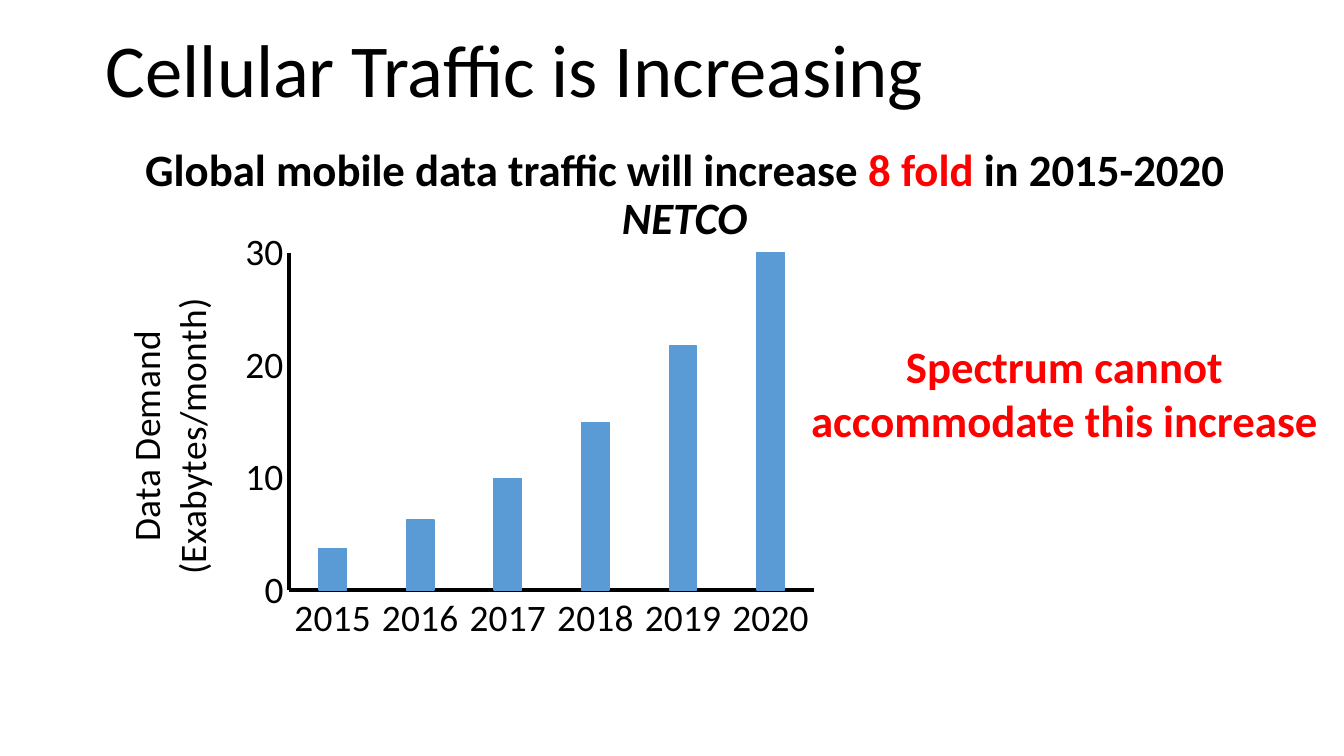
import dataclasses

import pptx
import pptx.chart.data
import pptx.dml.color
import pptx.enum.chart
import pptx.enum.text
import pptx.oxml
import pptx.oxml.ns
import pptx.util

Inches, Pt = pptx.util.Inches, pptx.util.Pt
RGBColor = pptx.dml.color.RGBColor
ALIGN, ANCHOR = pptx.enum.text.PP_ALIGN, pptx.enum.text.MSO_ANCHOR

BLACK = RGBColor(0x00, 0x00, 0x00)
RED = RGBColor(0xFF, 0x00, 0x00)
BLUE = RGBColor(0x5B, 0x9B, 0xD5)
FONT = "Calibri"


@dataclasses.dataclass
class Run:
    text: str
    color: RGBColor = BLACK
    fmt: dict = dataclasses.field(default_factory=dict)


@dataclasses.dataclass
class TextBlock:
    box: tuple
    runs: list
    size: int = 24
    bold: bool = True
    align: ALIGN = ALIGN.CENTER
    anchor: ANCHOR = ANCHOR.TOP
    spacing: float = 1.0


def set_font(font, color: RGBColor, **fmt) -> None:
    font.color.rgb = color
    for name, value in {"name": FONT, **fmt}.items():
        setattr(font, name, value)


def add_text(s, block: TextBlock) -> None:
    tf = s.shapes.add_textbox(*map(Inches, block.box)).text_frame
    tf.word_wrap = True
    tf.vertical_anchor = block.anchor
    p = tf.paragraphs[0]
    p.alignment, p.line_spacing = block.align, block.spacing
    for run in block.runs:
        r = p.add_run()
        r.text = run.text
        set_font(r.font, run.color, size=Pt(block.size), bold=block.bold, **run.fmt)


def set_layout(parent, index: int, **values) -> None:
    """Give a chart part a manual layout, as its child number index."""
    for old in parent.findall(pptx.oxml.ns.qn("c:layout")):
        parent.remove(old)
    parts = "".join(f'<c:{tag} val="{value}"/>' for tag, value in values.items())
    parent.insert(index, pptx.oxml.parse_xml(
        f'<c:layout {pptx.oxml.ns.nsdecls("c")}>'
        f"<c:manualLayout>{parts}</c:manualLayout></c:layout>"))


def style_axis(axis) -> None:
    none = pptx.enum.chart.XL_TICK_MARK.NONE
    for name, value in {"has_major_gridlines": False, "major_tick_mark": none,
                        "minor_tick_mark": none}.items():
        setattr(axis, name, value)
    axis.format.line.color.rgb = BLACK
    axis.format.line.width = Pt(2)
    set_font(axis.tick_labels.font, BLACK, size=Pt(20))


def add_demand_chart(s, box: tuple, demand: dict) -> None:
    data = pptx.chart.data.CategoryChartData()
    data.categories = list(demand)
    data.add_series("Series 1", list(demand.values()))
    chart = s.shapes.add_chart(pptx.enum.chart.XL_CHART_TYPE.COLUMN_CLUSTERED,
                               *map(Inches, box), data).chart
    chart.has_legend = chart.has_title = False
    set_font(chart.font, BLACK, size=Pt(10))

    # Columns
    plot = chart.plots[0]
    for name, value in {"gap_width": 219, "overlap": -27,
                        "vary_by_categories": False}.items():
        setattr(plot, name, value)
    fmt = plot.series[0].format
    fmt.fill.solid()
    fmt.fill.fore_color.rgb = fmt.line.color.rgb = BLUE
    fmt.line.width = Pt(0.75)

    # Axes
    axis = chart.value_axis
    style_axis(chart.category_axis)
    style_axis(axis)
    for name, value in {"minimum_scale": 0, "maximum_scale": 30, "major_unit": 10}.items():
        setattr(axis, name, value)

    # Value axis title, turned to read upwards
    title = axis.axis_title
    tf = title.text_frame
    tf.text = "Data Demand\n(Exabytes/month)"
    for p in tf.paragraphs:
        for r in p.runs:
            set_font(r.font, BLACK, size=Pt(20), bold=False)
    body = tf._txBody.find(pptx.oxml.ns.qn("a:bodyPr"))
    body.set("rot", "-5400000")
    body.set("vert", "horz")

    # Places of title and plot area, as shares of the chart size
    width, height = box[2:]
    edges = {"xMode": "edge", "yMode": "edge"}
    set_layout(title._element, 1, **edges, x=0.87 / width, y=0.49 / height)
    set_layout(chart._chartSpace.chart.plotArea, 0, layoutTarget="inner", **edges,
               x=2.15 / width, y=0.18 / height, w=3.91 / width, h=2.51 / height)


DEMAND = {"2015": 3.7, "2016": 6.2, "2017": 9.9, "2018": 14.9, "2019": 21.7, "2020": 30.6}

TITLE = TextBlock((0.69, 0, 8.62, 1.09), [Run("Cellular Traffic is Increasing")], size=40,
                  bold=False, align=ALIGN.LEFT, anchor=ANCHOR.MIDDLE, spacing=0.9)
FORECAST = TextBlock((0.88, 1.05, 8.43, 0.77), [
    Run("Global mobile data traffic will increase "),
    Run("8 fold ", RED),
    Run("in 2015-2020 "),
    Run("NETCO", fmt={"italic": True}),
], spacing=0.9)
CONCLUSION = TextBlock((5.84, 2.47, 4.16, 0.91),
                       [Run("Spectrum cannot accommodate this increase", RED)])


def main() -> None:
    prs = pptx.Presentation()
    # Widescreen, 16:9
    prs.slide_width = Inches(10)
    prs.slide_height = Inches(10 * 9 / 16)
    s = prs.slides.add_slide(prs.slide_layouts[6])
    add_text(s, TITLE)
    add_text(s, FORECAST)
    add_demand_chart(s, (0, 1.7, 8.74, 3.92), DEMAND)
    add_text(s, CONCLUSION)
    prs.save("out.pptx")


if __name__ == "__main__":
    main()
